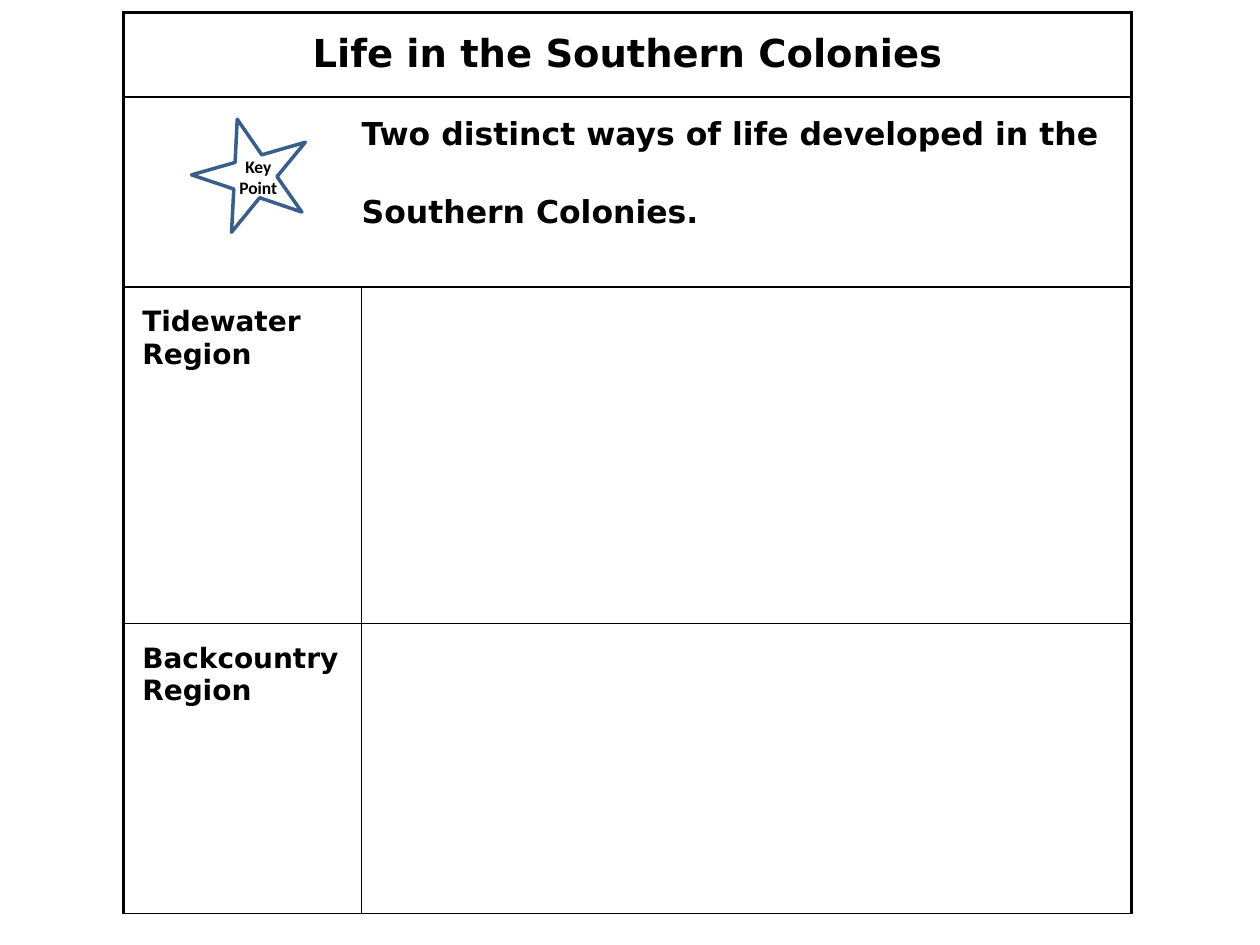
from lxml import etree
from pptx import Presentation
from pptx.dml.color import RGBColor
from pptx.enum import shapes, text
from pptx.oxml import ns
from pptx.util import Inches, Pt

BLACK = RGBColor(0, 0, 0)
WHITE = RGBColor(255, 255, 255)
BLUE = RGBColor(0x39, 0x5E, 0x89)

COLUMNS = (1.89, 6.11)
ROWS = (0.67, 1.51, 2.67, 2.3)
THICK, THIN = 2.25, 1


def style_paragraph(p, size, font, align=None):
    p.alignment = align
    for r in p.runs:
        r.font.size = Pt(size)
        r.font.name = font
        r.font.bold = True
        r.font.color.rgb = BLACK


def set_borders(cell, left, right, top, bottom):
    tc_pr = cell._tc.get_or_add_tcPr()
    for side, width in zip("LRTB", (left, right, top, bottom)):
        ln = etree.SubElement(tc_pr, ns.qn(f"a:ln{side}"), w=str(Pt(width)))
        fill = etree.SubElement(ln, ns.qn("a:solidFill"))
        etree.SubElement(fill, ns.qn("a:srgbClr"), val=str(BLACK))


def fill_cell(cell, lines, size, align=None):
    cell.text_frame.text = "\n".join(lines)
    for p in cell.text_frame.paragraphs:
        style_paragraph(p, size, "DejaVu Sans", align)


def add_notes_table(slide):
    frame = slide.shapes.add_table(len(ROWS), len(COLUMNS), Inches(0.98), Inches(0.1),
                                   Inches(sum(COLUMNS)), Inches(sum(ROWS)))
    table = frame.table
    for column, width in zip(table.columns, COLUMNS):
        column.width = Inches(width)
    for row, height in zip(table.rows, ROWS):
        row.height = Inches(height)

    # Thick frame at the left, top and right; thin rules elsewhere
    for i in range(len(ROWS)):
        for j in range(len(COLUMNS)):
            cell = table.cell(i, j)
            full_width = i < 2
            set_borders(cell,
                        THICK if j == 0 else THIN,
                        THICK if j == 1 or full_width else THIN,
                        THICK if i == 0 else THIN,
                        THIN)
            cell.fill.solid()
            cell.fill.fore_color.rgb = WHITE
            cell.margin_left = cell.margin_right = Inches(0.15)
            cell.margin_top = cell.margin_bottom = Inches(0.15)
    for i in range(2):
        table.cell(i, 0).merge(table.cell(i, 1))

    # Title, key point and region labels
    fill_cell(table.cell(0, 0), ["Life in the Southern Colonies"], 22, text.PP_ALIGN.CENTER)
    key_point = table.cell(1, 0)
    fill_cell(key_point, ["Two distinct ways of life developed in the",
                          "Southern Colonies."], 18)
    for p in key_point.text_frame.paragraphs:
        p._p.get_or_add_pPr().set("marL", str(Inches(1.74)))
    key_point.text_frame.paragraphs[1].space_before = Pt(24.2)
    for i, region in enumerate(("Tidewater", "Backcountry"), start=2):
        fill_cell(table.cell(i, 0), [f"{region} Region"], 16)


def add_star(slide):
    sp = slide.shapes.add_shape(shapes.MSO_SHAPE.STAR_5_POINT, Inches(1.53), Inches(0.93),
                                Inches(0.94), Inches(0.85))
    sp.shadow.inherit = False
    sp.rotation = 344
    sp.adjustments[0] = 0.19
    sp.fill.background()
    sp.line.color.rgb = BLUE
    sp.line.width = Pt(2)


def add_star_label(slide):
    sp = slide.shapes.add_textbox(Inches(1.71), Inches(1.19), Inches(0.68), Inches(0.44))
    tf = sp.text_frame
    tf.word_wrap = True
    tf.text = "Key Point"
    style_paragraph(tf.paragraphs[0], 10, "Calibri", text.PP_ALIGN.CENTER)


def main():
    prs = Presentation()
    prs.slide_width, prs.slide_height = Inches(10), Inches(7.5)
    slide = prs.slides.add_slide(prs.slide_layouts[6])
    add_notes_table(slide)
    add_star(slide)
    add_star_label(slide)
    prs.save("out.pptx")


if __name__ == "__main__":
    main()
